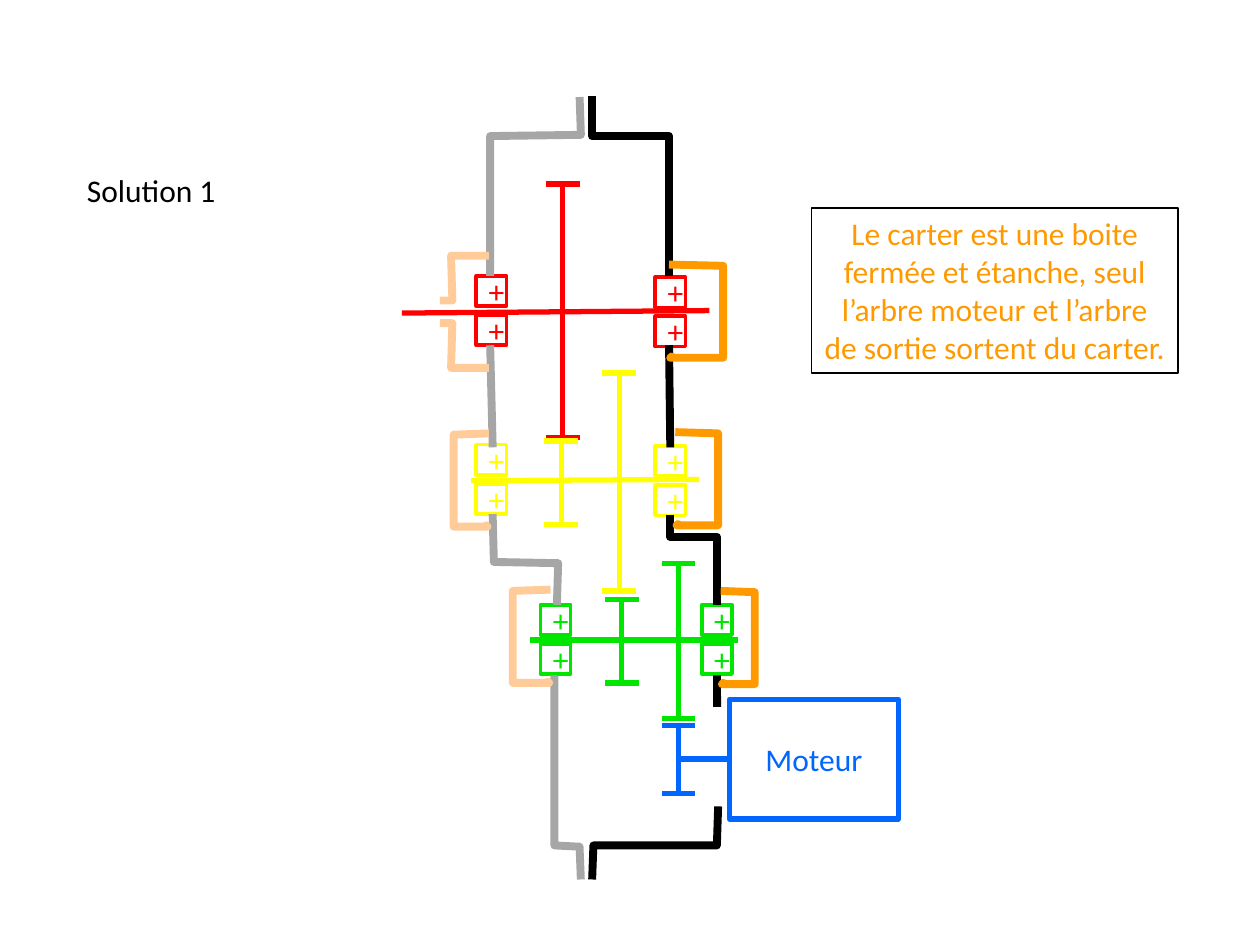
from collections import namedtuple
from pptx import Presentation
from pptx.dml.color import RGBColor as Rgb
from pptx.enum.shapes import MSO_CONNECTOR as Conn, MSO_SHAPE as Shape
from pptx.enum.text import MSO_ANCHOR as Anchor, MSO_AUTO_SIZE as Fit, PP_ALIGN as Align
from pptx.oxml.ns import qn
from pptx.util import Inches, Pt
from lxml import etree

HUES = {
    "red": "FF0000", "yellow": "FFFF00", "green": "00E600", "blue": "0066FF",
    "black": "000000", "gray": "A6A6A6", "orange": "FF9900", "peach": "FFCC99",
    "white": "FFFFFF",
}
COLS = 100
Box = namedtuple("Box", "x y w h")

prs = Presentation()
prs.slide_width, prs.slide_height = Inches(10), Inches(7.5)
slide = prs.slides.add_slide(prs.slide_layouts[5])
shapes = slide.shapes


def grid(*nums):
    return [round(n * prs.slide_width / COLS) for n in nums]


def hue(name):
    return Rgb.from_string(HUES[name])


def ink(line, color, width):
    line.color.rgb = hue(color)
    line.width = Pt(width)


def write(frame, text, color, align=Align.CENTER):
    frame.text = text
    para = frame.paragraphs[0]
    para.alignment = align
    para.font.name = "Calibri"
    para.font.size = Pt(18)
    para.font.color.rgb = hue(color)


def bar(x1, y1, x2, y2, color):
    line = shapes.add_connector(Conn.STRAIGHT, *grid(x1, y1, x2, y2))
    ink(line.line, color, 3)
    etree.SubElement(line._element.spPr, qn("a:effectLst"))
    return line


def trace(points, color):
    first, *rest = [grid(*point) for point in points]
    pen = shapes.build_freeform(*first, scale=1.0)
    pen.add_line_segments(rest, close=False)
    form = pen.convert_to_shape()
    form.shadow.inherit = False
    form.fill.background()
    ink(form.line, color, 4.5)


def block(box, text, color, width):
    rect = shapes.add_shape(Shape.RECTANGLE, *grid(*box))
    rect.shadow.inherit = False
    rect.fill.solid()
    rect.fill.fore_color.rgb = hue("white")
    ink(rect.line, color, width)
    rect.text_frame.vertical_anchor = Anchor.MIDDLE
    write(rect.text_frame, text, color)
    return rect


def bearing(box, color):
    for y in (box.y, box.y + box.h - box.w):
        block(Box(box.x, y, box.w, box.w), "+", color, 2)


def gear(box, color):
    mid = box.x + box.w / 2
    bar(mid, box.y, mid, box.y + box.h, color)
    for y in (box.y, box.y + box.h):
        bar(box.x, y, box.x + box.w, y, color)


def cap(box, color):
    side = 1 if box.w > 0 else -1
    far, low = box.x + box.w, box.y + box.h
    hook = [(0.1, 0), (0.3, 0), (0.2, 0.1), (0.4, 0), (0.3, 0)]
    trace([(box.x, box.y), (far, box.y + 0.1), (far, low)]
          + [(box.x + side * dx, low - dy) for dx, dy in hook], color)


def vent(box, color):
    right = box.x + box.w
    for y, rise in ((box.y, 3.55), (box.y + box.h, -3.55)):
        trace([(right, y), (box.x + 0.9, y), (box.x + 1, y + rise),
               (box.x, y + rise)], color)


def motor(box, color):
    gear(Box(box.x - 5.4, box.y + 2.1, 2.7, 5.4), color)
    body = block(box, "Moteur", color, 3)
    mid = box.y + box.h / 2
    bar(box.x - 4.05, mid, box.x, mid, color).end_connect(body, 1)


def title(box):
    head = shapes.title
    head.left, head.top, head.width, head.height = grid(*box)
    frame = head.text_frame
    frame.word_wrap = False
    frame.auto_size = Fit.SHAPE_TO_FIT_TEXT
    frame.vertical_anchor = Anchor.TOP
    write(frame, "Solution 1", "black", Align.LEFT)


def note(box):
    area = shapes.add_textbox(*grid(*box))
    area.text_frame.word_wrap = True
    ink(area.line, "black", 0.75)
    write(area.text_frame, "Le carter est une boite fermée et étanche, seul "
          "l’arbre moteur et l’arbre de sortie sortent du carter.", "orange")


BEARINGS = [
    (37.8, 21.9, "red"), (52, 22, "red"),
    (37.8, 35.3, "yellow"), (52, 35.4, "yellow"),
    (42.9, 48, "green"), (55.7, 48, "green"),
]
SHAFTS = [
    (31.9, 24.85, 56.3, 24.65, "red"),
    (37.4, 38.15, 55.5, 38.05, "yellow"),
    (42.1, 50.8, 58.6, 50.8, "green"),
]
GEARS = [
    (43.3, 14.6, 20.1, "red"),
    (47.8, 29.6, 17.3, "yellow"), (43.2, 35, 6.6, "yellow"),
    (52.5, 44.7, 12.3, "green"), (48, 47.6, 6.6, "green"),
]
WALLS = {
    "black": [
        [(47, 7.6), (47, 10.8), (53.1, 10.8), (53.1, 21.9)],
        [(53.1, 27.4), (53.2, 35.5)],
        [(53.2, 40.9), (53.2, 42.6), (56.9, 42.6), (56.9, 48)],
        [(56.9, 53.6), (56.91, 56.1)],
        [(57, 64), (56.9, 67.1), (47.1, 67.1), (47, 69.8)],
    ],
    "gray": [
        [(46, 7.7), (46.1, 10.7), (38.9, 10.8), (38.9, 21.9)],
        [(38.9, 27.4), (39.1, 35.5)],
        [(39.1, 40.8), (39.2, 44.6), (44.3, 44.7), (44.2, 48)],
        [(44, 53.6), (44, 67.1), (46, 67.2), (46.1, 69.8)],
    ],
}
CAPS = [
    (53.1, 21, 4.3, "orange"), (57.2, 46.9, 2.7, "orange"),
    (53.6, 34.3, 3.4, "orange"),
    (38.8, 34.4, -2.8, "peach"), (43.7, 46.8, -3, "peach"),
]

title(Box(5.9, 13.1, 12.4, 4))
motor(Box(57.9, 55.5, 13.4, 9.5), "blue")
for x, y, color in BEARINGS:
    bearing(Box(x, y, 2.4, 5.5), color)
for shaft in SHAFTS:
    bar(*shaft)
for x, y, h, color in GEARS:
    gear(Box(x, y, 2.7, h), color)
for color, runs in WALLS.items():
    for run in runs:
        trace(run, color)
for x, y, w, color in CAPS:
    cap(Box(x, y, w, 7.4), color)
vent(Box(34.9, 20.3, 3.9, 8.9), "peach")
note(Box(64.4, 16.5, 29.1, 13.1))

prs.save("out.pptx")
